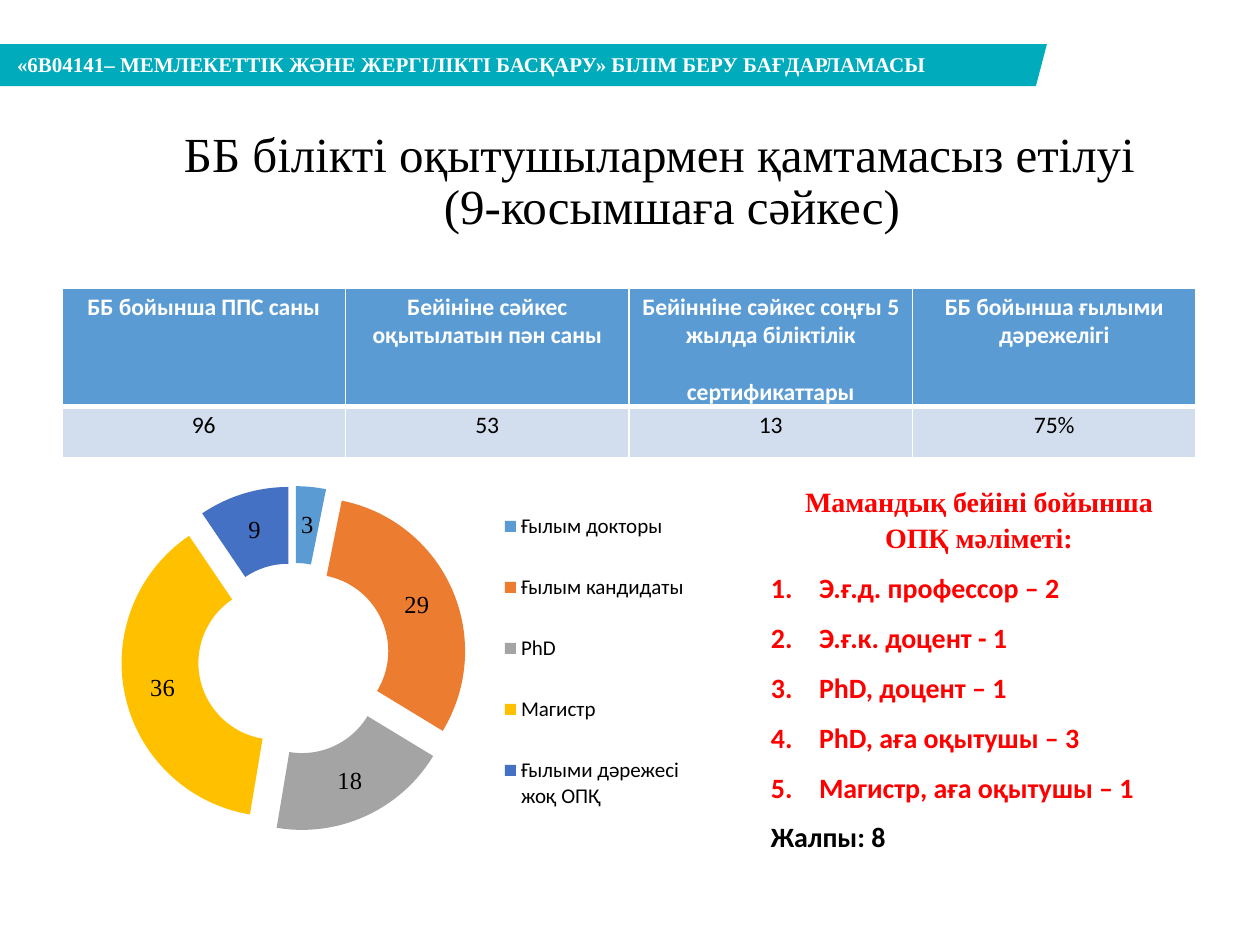
from dataclasses import dataclass

from pptx import Presentation
from pptx.chart.data import CategoryChartData
from pptx.dml.color import RGBColor
from pptx.enum.chart import XL_CHART_TYPE
from pptx.enum.shapes import MSO_SHAPE
from pptx.enum.text import MSO_ANCHOR, PP_ALIGN
from pptx.oxml import parse_xml
from pptx.oxml.ns import nsdecls, qn
from pptx.util import Emu, Pt

PX = 914400 / 126


@dataclass(frozen=True)
class Theme:
    serif: str = "Times New Roman"
    sans: str = "Calibri"
    banner: str = "00ABBB"
    white: str = "FFFFFF"
    black: str = "000000"
    red: str = "FF0000"
    header_fill: str = "5B9BD4"
    body_fill: str = "D2DEEE"
    slices: tuple = ("5B9BD4", "EC7C30", "A4A4A4", "FFC000", "4471C4")
    title_size: float = 28
    list_size: float = 16
    value_size: float = 14
    table_size: float = 13.5
    small_size: float = 12


THEME = Theme()
TABLE_HEADERS = (
    ("ББ бойынша ППС саны",),
    ("Бейініне сәйкес", "оқытылатын пән саны"),
    ("Бейінніне сәйкес соңғы 5", "жылда біліктілік", "сертификаттары"),
    ("ББ бойынша ғылыми", "дәрежелігі"),
)
TABLE_VALUES = ("96", "53", "13", "75%")
STAFF = (
    ("Ғылым докторы", 3),
    ("Ғылым кандидаты", 29),
    ("PhD", 18),
    ("Магистр", 36),
    ("Ғылыми дәрежесі\vжоқ ОПҚ", 9),
)
LIST_HEADING = ("Мамандық бейіні бойынша", "ОПҚ мәліметі:")
LIST_ITEMS = (
    "Э.ғ.д. профессор – 2",
    "Э.ғ.к. доцент - 1",
    "PhD, доцент – 1",
    "PhD, аға оқытушы – 3",
    "Магистр, аға оқытушы – 1",
)


def px(value):
    return Emu(round(value * PX))


def color(value):
    return RGBColor.from_string(value)


def place(shape, left, top, width, height):
    shape.left, shape.top = px(left), px(top)
    shape.width, shape.height = px(width), px(height)


def style_font(font, name, size, fill, bold=False):
    font.name, font.size, font.bold = name, Pt(size), bold
    font.color.rgb = color(fill)


def prepare_frame(frame, top_inset):
    frame.word_wrap = True
    frame.vertical_anchor = MSO_ANCHOR.TOP
    frame.margin_left = frame.margin_right = frame.margin_bottom = 0
    frame.margin_top = px(top_inset)


def add_run(paragraph, text, *style):
    """Add text as styled runs, with a line break at each vertical tab."""
    for index, part in enumerate(text.split("\v")):
        if index:
            paragraph.add_line_break()
        run = paragraph.add_run()
        run.text = part
        style_font(run.font, *style)


def next_paragraph(frame, index):
    return frame.add_paragraph() if index else frame.paragraphs[0]


def set_indent(paragraph, margin, indent=0):
    properties = paragraph._p.get_or_add_pPr()
    properties.set("marL", str(px(margin)))
    properties.set("indent", str(px(indent)))
    return properties


def add_text(slide, box, text, *style):
    shape = slide.shapes.add_textbox(*map(px, box))
    prepare_frame(shape.text_frame, 3)
    add_run(shape.text_frame.paragraphs[0], text, *style)


def fill_shape(shape, fill):
    shape.shadow.inherit = False
    shape.fill.solid()
    shape.fill.fore_color.rgb = color(fill)
    shape.line.fill.background()


def add_banner(slide):
    builder = slide.shapes.build_freeform(1047, 44, scale=PX)
    builder.add_line_segments([(0, 44), (0, 86), (1036, 86)], close=True)
    fill_shape(builder.convert_to_shape(), THEME.banner)
    add_text(slide, (17, 49, 940, 29),
             "«6В04141– МЕМЛЕКЕТТІК ЖӘНЕ ЖЕРГІЛІКТІ БАСҚАРУ» БІЛІМ БЕРУ БАҒДАРЛАМАСЫ",
             THEME.serif, THEME.small_size, THEME.white, True)


def fill_title(title):
    place(title, 122, 112, 1016, 116)
    prepare_frame(title.text_frame, 17)
    paragraph = title.text_frame.paragraphs[0]
    set_indent(paragraph, 322, -260)
    paragraph.alignment = PP_ALIGN.LEFT
    paragraph.line_spacing = Pt(30.2)
    add_run(paragraph, "ББ білікті оқытушылармен қамтамасыз етілуі\v(9-косымшаға сәйкес)",
            THEME.serif, THEME.title_size, THEME.black)


def set_borders(cell, **widths):
    properties = cell._tc.get_or_add_tcPr()
    for index, (side, width) in enumerate(widths.items()):
        properties.insert(index, parse_xml(
            f'<a:{side} {nsdecls("a")} w="{Pt(width)}"><a:solidFill>'
            f'<a:srgbClr val="{THEME.white}"/></a:solidFill></a:{side}>'))


def fill_cell(cell, lines, fill, *style):
    cell.fill.solid()
    cell.fill.fore_color.rgb = color(fill)
    prepare_frame(cell.text_frame, 0)
    cell.margin_left = cell.margin_right = cell.margin_bottom = 0
    cell.margin_top = px(5)
    for index, line in enumerate(lines):
        paragraph = next_paragraph(cell.text_frame, index)
        paragraph.alignment = PP_ALIGN.CENTER
        if len(lines) > 1:
            paragraph.line_spacing = Pt(16.2)
        if index == 2:
            paragraph.space_before = Pt(16.2)
        add_run(paragraph, line, *style)


def add_summary_table(slide):
    table = slide.shapes.add_table(2, 4, px(62), px(288), px(1134), px(149)).table
    for row, height in zip(table.rows, (98, 51)):
        row.height = px(height)
    for column, (header, value) in enumerate(zip(TABLE_HEADERS, TABLE_VALUES)):
        top, bottom = table.cell(0, column), table.cell(1, column)
        fill_cell(top, header, THEME.header_fill,
                  THEME.sans, THEME.table_size, THEME.white, True)
        fill_cell(bottom, (value,), THEME.body_fill,
                  THEME.sans, THEME.table_size, THEME.black)
        set_borders(top, lnL=1, lnR=1, lnT=1, lnB=3)
        set_borders(bottom, lnL=1, lnR=1, lnT=3, lnB=1)


def set_plot_layout(chart, start, extent):
    """Pin the plot to a square given in fractions of the chart frame."""
    area = chart._chartSpace.chart.plotArea
    previous = area.find(qn("c:layout"))
    if previous is not None:
        area.remove(previous)
    area.insert(0, parse_xml(
        f'<c:layout {nsdecls("c")}><c:manualLayout><c:layoutTarget val="inner"/>'
        '<c:xMode val="edge"/><c:yMode val="edge"/>'
        f'<c:x val="{start:.2f}"/><c:y val="{start:.2f}"/>'
        f'<c:w val="{extent:.2f}"/><c:h val="{extent:.2f}"/>'
        '</c:manualLayout></c:layout>'))


def add_staff_chart(slide):
    data = CategoryChartData()
    data.categories = [label.replace("\v", " ") for label, _ in STAFF]
    data.add_series("ОПҚ", [value for _, value in STAFF])
    chart = slide.shapes.add_chart(XL_CHART_TYPE.DOUGHNUT_EXPLODED,
                                   px(114), px(479), px(360), px(360), data).chart
    chart.has_title = chart.has_legend = False
    style_font(chart.font, THEME.serif, THEME.value_size, THEME.black)
    set_plot_layout(chart, 0.02, 0.96)
    plot = chart.plots[0]
    plot.vary_by_categories = True
    plot.has_data_labels = True
    plot.data_labels.show_value = True
    plot.data_labels.show_percentage = False
    style_font(plot.data_labels.font, THEME.serif, THEME.value_size, THEME.black)
    for index, fill in enumerate(THEME.slices):
        slice_format = plot.series[0].points[index].format
        slice_format.fill.solid()
        slice_format.fill.fore_color.rgb = color(fill)
        slice_format.line.fill.background()


def add_legend(slide):
    for index, ((label, _), fill) in enumerate(zip(STAFF, THEME.slices)):
        top = 510 + 61 * index
        marker = slide.shapes.add_shape(MSO_SHAPE.RECTANGLE,
                                        px(505), px(top + 11), px(11), px(11))
        fill_shape(marker, fill)
        height = 29 + 25 * label.count("\v")
        add_text(slide, (521, top, 180, height), label,
                 THEME.sans, THEME.small_size, THEME.black)


def fill_staff_list(body):
    place(body, 770, 479, 394, 326)
    frame = body.text_frame
    prepare_frame(frame, 6)
    for index, line in enumerate(LIST_HEADING + LIST_ITEMS):
        paragraph = next_paragraph(frame, index)
        is_heading = index < len(LIST_HEADING)
        if is_heading:
            properties = set_indent(paragraph, 24)
            bullet = f'<a:buNone {nsdecls("a")}/>'
            paragraph.alignment = PP_ALIGN.CENTER
        else:
            properties = set_indent(paragraph, 49, -48)
            bullet = f'<a:buAutoNum {nsdecls("a")} type="arabicPeriod"/>'
        properties.append(parse_xml(bullet))
        space = 1.4 if is_heading else 9.3
        paragraph.space_before = Pt(space if index else 0)
        add_run(paragraph, line, THEME.serif if is_heading else THEME.sans,
                THEME.list_size, THEME.red, True)


def main():
    presentation = Presentation()
    presentation.slide_width, presentation.slide_height = px(1260), px(945)
    slide = presentation.slides.add_slide(presentation.slide_layouts[1])
    add_banner(slide)
    fill_title(slide.shapes.title)
    add_summary_table(slide)
    add_staff_chart(slide)
    add_legend(slide)
    fill_staff_list(slide.placeholders[1])
    add_text(slide, (771, 817, 130, 36), "Жалпы: 8",
             THEME.sans, THEME.list_size, THEME.black, True)
    presentation.save("out.pptx")


if __name__ == "__main__":
    main()
